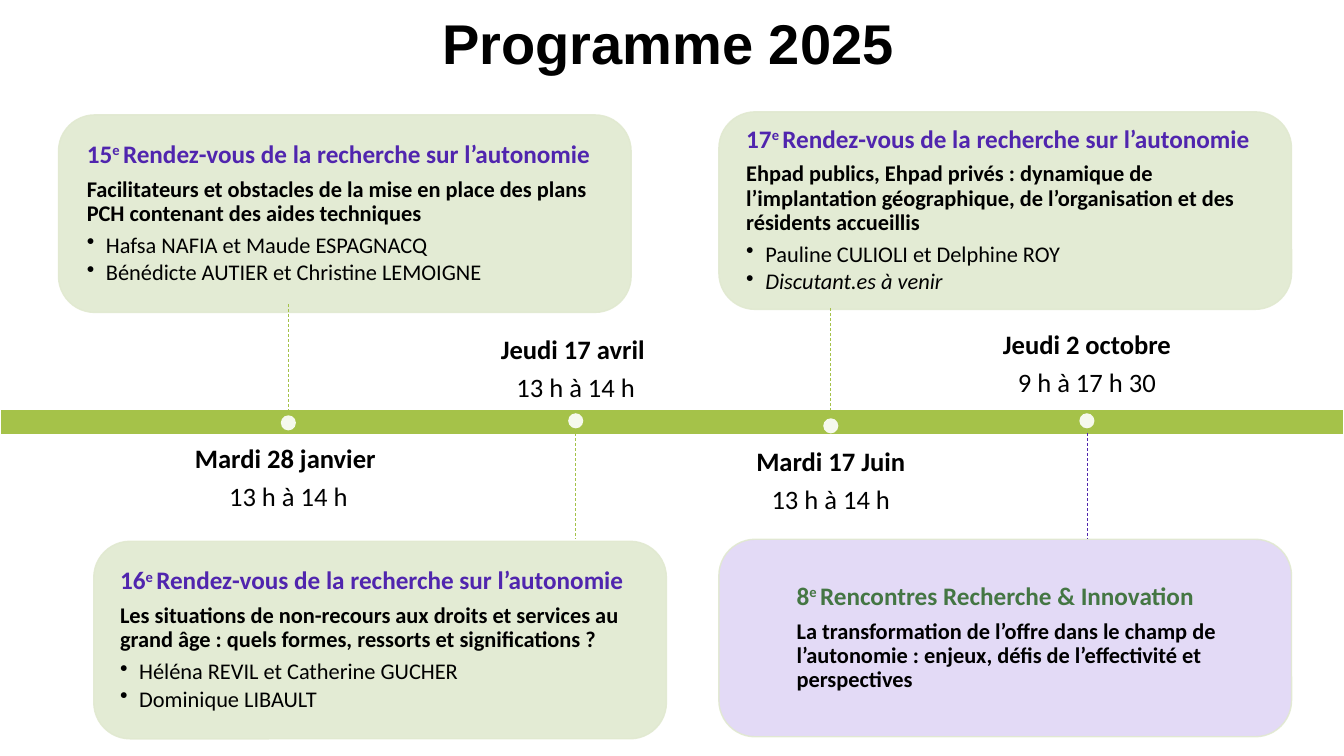
import lxml.etree
import pptx
import pptx.dml.color
import pptx.enum.dml
import pptx.enum.shapes
import pptx.enum.text
import pptx.oxml.ns
import pptx.util

Inches = pptx.util.Inches
SHAPES = pptx.enum.shapes.MSO_SHAPE
ALIGN = pptx.enum.text.PP_ALIGN
ANCHOR = pptx.enum.text.MSO_ANCHOR
GREEN, SAGE, LILAC, PURPLE, LEAF = "A5C249", "E1E9D0", "E0D6F6", "5025AE", "447643"
BLACK, WHITE = "000000", "FFFFFF"

SLIDE_WIDTH, SLIDE_HEIGHT = 13.33, 7.5
BAND_TOP, BAND_HEIGHT = 4.06, 0.25
CARD_WIDTH, CARD_HEIGHT = 5.68, 1.96
DATE_WIDTH, DATE_HEIGHT = 4.06, 0.69
DOT_SIZE = 0.15
CORNER = 0.36
MEETING = "Rendez-vous de la recherche sur l’autonomie"

MILESTONES = [
    dict(x=2.86, date="Mardi 28 janvier ", hours="13 h à 14 h", date_top=4.42, dot_top=4.12,
         link=(3.02, 4.07), card=(0.58, 1.14), inset=0.28, number="15", heading=MEETING,
         subject="Facilitateurs et obstacles de la mise en place des plans PCH "
                 "contenant des aides techniques",
         speakers=["Hafsa NAFIA et Maude ESPAGNACQ", "Bénédicte AUTIER et Christine LEMOIGNE"]),
    dict(x=5.71, date="Jeudi 17 avril ", hours="13 h à 14 h", date_top=3.31, dot_top=4.1,
         link=(4.3, 5.35), card=(0.93, 5.37), inset=0.26, number="16", heading=MEETING,
         subject="Les situations de non-recours aux droits et services au grand âge : "
                 "quels formes, ressorts et significations ?",
         speakers=["Héléna REVIL et Catherine GUCHER", "Dominique LIBAULT"]),
    dict(x=8.24, date="Mardi 17 Juin", hours="13 h à 14 h", date_top=4.45, dot_top=4.15,
         link=(3.06, 4.1), card=(7.13, 1.11), inset=0.27, number="17", heading=MEETING,
         subject="Ehpad publics, Ehpad privés : dynamique de l’implantation géographique, "
                 "de l’organisation et des résidents accueillis",
         speakers=["Pauline CULIOLI et Delphine ROY"], pending="Discutant.es à venir"),
    dict(x=10.78, date="Jeudi 2 octobre", hours="9 h à 17 h 30", date_top=3.26, dot_top=4.1,
         link=(4.3, 5.35), card=(7.13, 5.35), inset=0.28, number="8",
         heading="Rencontres Recherche & Innovation",
         subject="La transformation de l’offre dans le champ de l’autonomie : enjeux, "
                 "défis de l’effectivité et perspectives",
         speakers=[], fill=LILAC, heading_color=LEAF, link_color=PURPLE, indent=0.49),
]


def rgb(value):
    return pptx.dml.color.RGBColor.from_string(value)


def make_translucent(fill_owner):
    """Give every solid colour of the shape properties 90 % opacity."""
    for color in fill_owner.iter(pptx.oxml.ns.qn("a:srgbClr")):
        lxml.etree.SubElement(color, pptx.oxml.ns.qn("a:alpha"), val="90000")


def add_run(paragraph, text, size=16, color=BLACK, bold=False, italic=False,
            superscript=False, font="Calibri"):
    run = paragraph.add_run()
    run.text = text
    run.font.name = font
    run.font.size = pptx.util.Pt(size)
    run.font.bold = bold
    run.font.italic = italic
    run.font.color.rgb = rgb(color)
    if superscript:
        run._r.get_or_add_rPr().set("baseline", "30000")


def add_paragraph(frame, space_after, align=ALIGN.LEFT, indent=0, bullet=False):
    """Return a new paragraph, reusing the empty first one."""
    first = frame.paragraphs[0]
    paragraph = frame.add_paragraph() if first.runs else first
    paragraph.alignment = align
    paragraph.line_spacing = 0.9
    paragraph.space_after = pptx.util.Pt(space_after)
    properties = paragraph._p.get_or_add_pPr()
    if bullet:
        properties.set("marL", str(Inches(0.19)))
        properties.set("indent", str(Inches(-0.19)))
        lxml.etree.SubElement(properties, pptx.oxml.ns.qn("a:buChar"), char="•")
    elif indent:
        properties.set("marL", str(Inches(indent)))
    return paragraph


def set_frame(frame, anchor, inset):
    frame.word_wrap = True
    frame.vertical_anchor = anchor
    frame.margin_left = frame.margin_right = Inches(inset)
    frame.margin_top = frame.margin_bottom = Inches(inset)


def add_filled_shape(slide, kind, left, top, width, height, fill, line=None):
    shape = slide.shapes.add_shape(kind, Inches(left), Inches(top), Inches(width), Inches(height))
    shape.shadow.inherit = False
    shape.fill.solid()
    shape.fill.fore_color.rgb = rgb(fill)
    if line:
        shape.line.color.rgb = rgb(line)
        shape.line.width = pptx.util.Pt(1)
    else:
        shape.line.fill.background()
    return shape


def add_title(slide, left, top, width, height):
    title = slide.shapes.title
    title.left, title.top = Inches(left), Inches(top)
    title.width, title.height = Inches(width), Inches(height)
    title.text_frame.vertical_anchor = ANCHOR.MIDDLE
    paragraph = add_paragraph(title.text_frame, 0, ALIGN.CENTER)
    add_run(paragraph, "Programme 2025", size=40, bold=True, font="Arial")


def add_card(slide, milestone):
    left, top = milestone["card"]
    indent = milestone.get("indent", 0)
    card = add_filled_shape(slide, SHAPES.ROUNDED_RECTANGLE, left, top, CARD_WIDTH, CARD_HEIGHT,
                            milestone.get("fill", SAGE), SAGE)
    card.adjustments[0] = CORNER / CARD_HEIGHT
    make_translucent(card._element.spPr)
    frame = card.text_frame
    # A rounded rectangle already insets its text by 0.29 of the corner radius.
    set_frame(frame, ANCHOR.MIDDLE, milestone["inset"] - 0.29 * CORNER)

    style = dict(size=18, color=milestone.get("heading_color", PURPLE), bold=True)
    heading = add_paragraph(frame, 6.3, indent=indent)
    add_run(heading, milestone["number"], **style)
    add_run(heading, "e ", superscript=True, **style)
    add_run(heading, milestone["heading"], **style)
    add_run(add_paragraph(frame, 5.6, indent=indent), milestone["subject"], bold=True)
    for speaker in milestone["speakers"]:
        add_run(add_paragraph(frame, 2.4, bullet=True), speaker)
    if "pending" in milestone:
        add_run(add_paragraph(frame, 2.4, bullet=True), milestone["pending"], italic=True)


def add_date(slide, milestone):
    top = milestone["date_top"]
    box = slide.shapes.add_textbox(Inches(milestone["x"] - DATE_WIDTH / 2), Inches(top),
                                   Inches(DATE_WIDTH), Inches(DATE_HEIGHT))
    anchor = ANCHOR.BOTTOM if top < BAND_TOP else ANCHOR.TOP
    set_frame(box.text_frame, anchor, 0)
    for text, bold in ((milestone["date"], True), (milestone["hours"], False)):
        paragraph = add_paragraph(box.text_frame, 6.65, ALIGN.CENTER)
        add_run(paragraph, text, size=19, bold=bold)


def add_link(slide, milestone):
    """Draw the dashed line between a card and the band."""
    x = Inches(milestone["x"])
    start, end = milestone["link"]
    link = slide.shapes.add_connector(pptx.enum.shapes.MSO_CONNECTOR.STRAIGHT,
                                      x, Inches(start), x, Inches(end))
    link.line.color.rgb = rgb(milestone.get("link_color", GREEN))
    link.line.width = pptx.util.Pt(0.5)
    link.line.dash_style = pptx.enum.dml.MSO_LINE.DASH
    lxml.etree.SubElement(link._element.spPr, pptx.oxml.ns.qn("a:effectLst"))


def add_dot(slide, milestone):
    dot = add_filled_shape(slide, SHAPES.OVAL, milestone["x"] - DOT_SIZE / 2,
                           milestone["dot_top"], DOT_SIZE, DOT_SIZE, WHITE)
    make_translucent(dot._element.spPr)


def main():
    presentation = pptx.Presentation()
    presentation.slide_width = Inches(SLIDE_WIDTH)
    presentation.slide_height = Inches(SLIDE_HEIGHT)
    slide = presentation.slides.add_slide(presentation.slide_layouts.get_by_name("Title Only"))
    add_title(slide, 0.15, -0.16, 12.95, 1.24)
    add_filled_shape(slide, SHAPES.RECTANGLE, 0, BAND_TOP, SLIDE_WIDTH, BAND_HEIGHT, GREEN, WHITE)
    for milestone in MILESTONES:
        add_card(slide, milestone)
        add_link(slide, milestone)
        add_date(slide, milestone)
        add_dot(slide, milestone)
    presentation.save("out.pptx")


if __name__ == "__main__":
    main()
